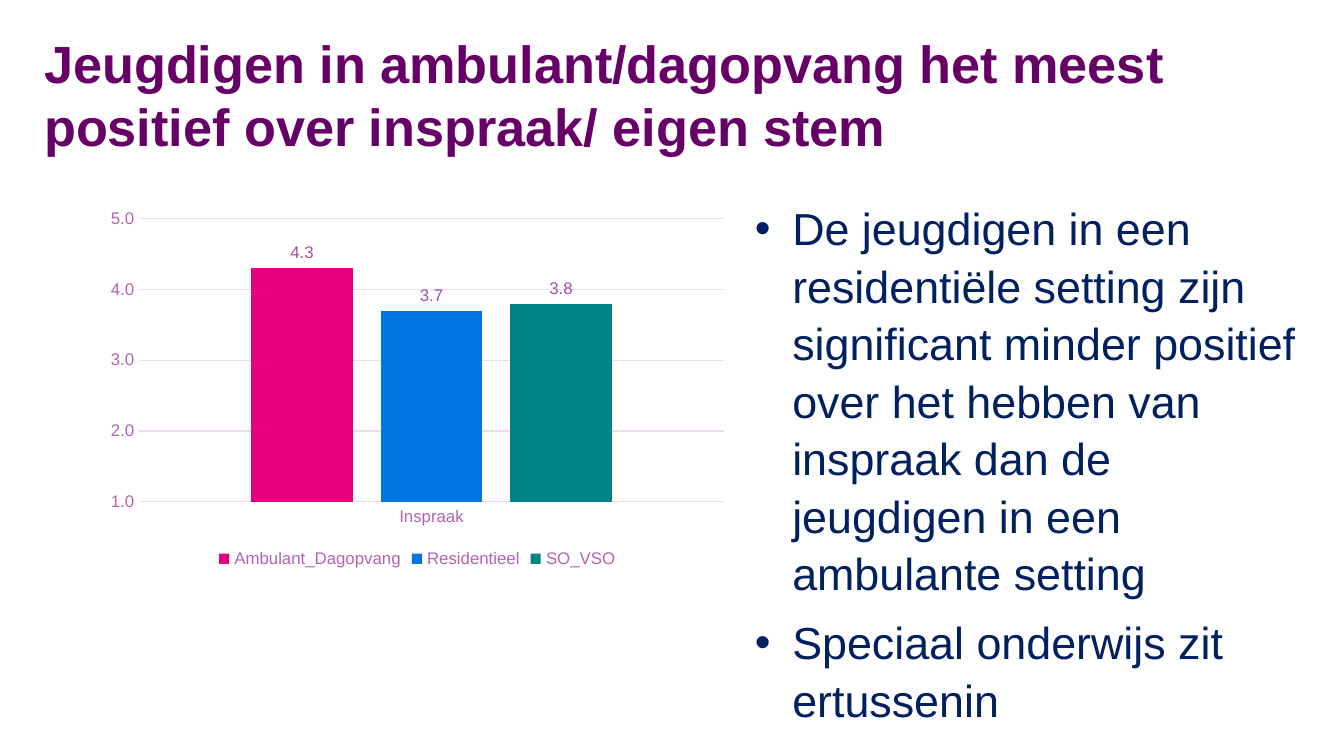
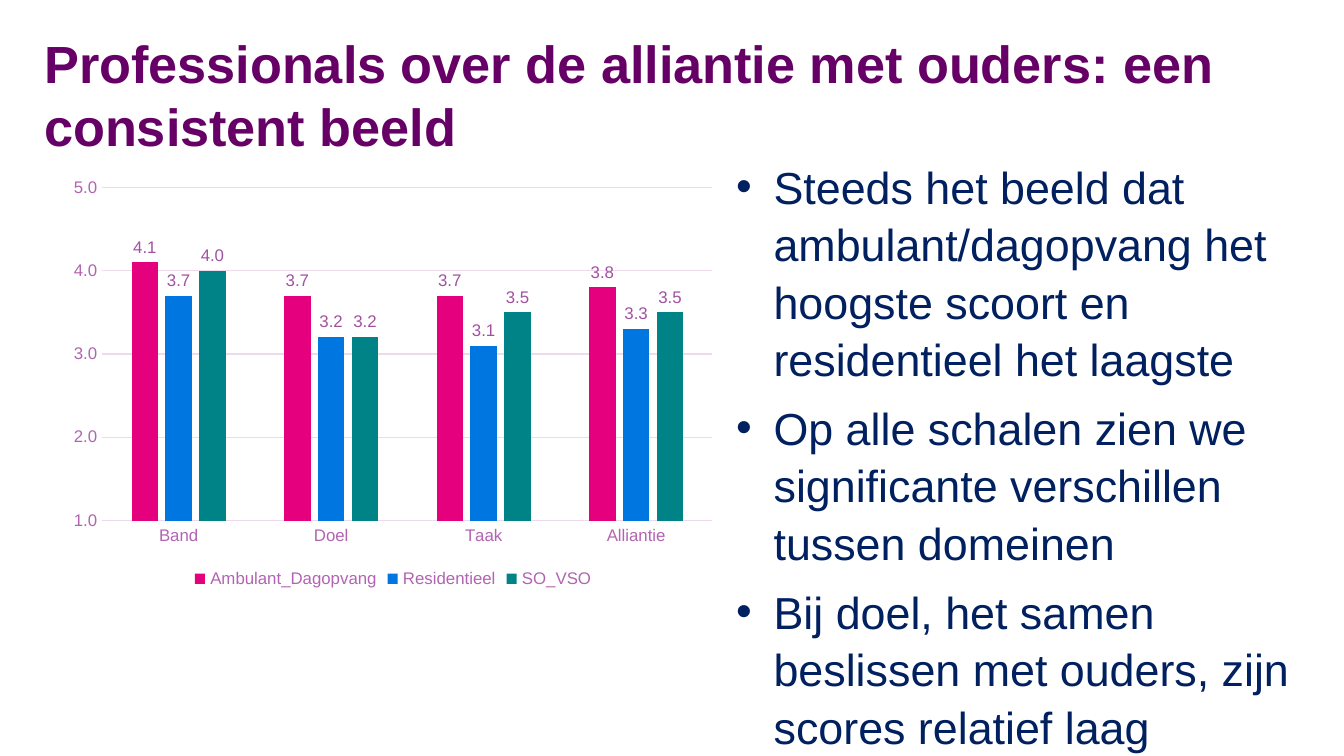
from lxml.etree import SubElement as Sub
from pptx import Presentation
from pptx.chart.data import CategoryChartData as Data
from pptx.dml.color import RGBColor as Rgb
from pptx.enum.chart import XL_CHART_TYPE as Kind, XL_LABEL_POSITION as Spot
from pptx.enum.chart import XL_LEGEND_POSITION as Side, XL_TICK_MARK as Tick
from pptx.enum.text import MSO_ANCHOR as Anchor, MSO_AUTO_SIZE as Fit, PP_ALIGN as Align
from pptx.oxml.ns import qn
from pptx.util import Pt

FACE = "Arial"
PLUM, NAVY, TEXT, MARK, GRID = "660066", "002060", "B264B2", "A251A1", "EDDBED"
BARS = {"Ambulant_Dagopvang": "E5007D", "Residentieel": "0076E0", "SO_VSO": "008386"}
FORM = "#,##0.0"


def tint(target, code):
    target.rgb = Rgb.from_string(code)


def style(font, size, code, bold=False):
    font.name, font.size, font.bold = FACE, Pt(size), bold
    tint(font.color, code)


def put(para, text, size=24, code=NAVY, bold=False, bullet=False, space=None, after=0):
    para.alignment = Align.LEFT
    para.space_before, para.space_after = Pt(0), Pt(after)
    if space:
        para.line_spacing = space
    if bullet:
        props = para._p.get_or_add_pPr()
        props.set("marL", str(Pt(20)))
        props.set("indent", str(-Pt(20)))
        Sub(props, qn("a:buFont"), typeface=FACE)
        Sub(props, qn("a:buChar"), char="•")
    run = para.add_run()
    run.text = text
    style(run.font, size, code, bold)


def inset(frame, wide, high):
    frame.margin_left = frame.margin_right = Pt(wide)
    frame.margin_top = frame.margin_bottom = Pt(high)
    frame.word_wrap = True


class Deck:
    def __init__(self):
        self.show = Presentation()
        self.show.slide_width, self.show.slide_height = Pt(720), Pt(405)
        self.slide = None

    def title(self, text):
        self.slide = self.show.slides.add_slide(self.show.slide_layouts[5])
        head = self.slide.shapes.title
        head.left, head.top, head.width, head.height = map(Pt, (16.5, 16.5, 687, 67.5))
        frame = head.text_frame
        inset(frame, 7.2, 3.6)
        frame.auto_size = Fit.NONE
        frame.vertical_anchor = Anchor.MIDDLE
        put(frame.paragraphs[0], text, size=28, code=PLUM, bold=True)

    def points(self, area, lines):
        frame = self.slide.shapes.add_textbox(*map(Pt, area)).text_frame
        inset(frame, 5.4, 2.7)
        frame.auto_size = Fit.SHAPE_TO_FIT_TEXT
        for spot, line in enumerate(lines):
            para = frame.add_paragraph() if spot else frame.paragraphs[0]
            put(para, line, bullet=True, space=1.07, after=6)

    def chart(self, area, names, rows):
        data = Data(number_format=FORM)
        data.categories = names
        for name, row in zip(BARS, rows):
            data.add_series(name, row)
        chart = self.slide.shapes.add_chart(Kind.COLUMN_CLUSTERED, *map(Pt, area), data).chart
        style(chart.font, 10, "663366")
        chart.has_title = False
        chart.has_legend = True
        chart.legend.position = Side.BOTTOM
        chart.legend.include_in_layout = False
        style(chart.legend.font, 9, TEXT)
        self.axes(chart)
        plot = chart.plots[0]
        plot.gap_width, plot.overlap, plot.vary_by_categories = 219, -27, False
        for bar in plot.series:
            bar.format.fill.solid()
            tint(bar.format.fill.fore_color, BARS[bar.name])
            bar.invert_if_negative = False
            tags = bar.data_labels
            tags.show_value = True
            tags.position = Spot.OUTSIDE_END
            tags.number_format, tags.number_format_is_linked = FORM, False
            style(tags.font, 9, MARK)

    def axes(self, chart):
        base, scale = chart.category_axis, chart.value_axis
        for axis in (base, scale):
            axis.major_tick_mark = axis.minor_tick_mark = Tick.NONE
            style(axis.tick_labels.font, 9, TEXT)
        scale.minimum_scale, scale.maximum_scale, scale.major_unit = 1, 5, 1
        scale.tick_labels.number_format = FORM
        scale.tick_labels.number_format_is_linked = False
        scale.format.line.fill.background()
        scale.has_major_gridlines = True
        for line in (base.format.line, scale.major_gridlines.format.line):
            line.width = Pt(0.75)
            tint(line.color, GRID)


def main():
    deck = Deck()
    deck.title("Jeugdigen in ambulant/dagopvang het meest positief over inspraak/ eigen stem")
    deck.points((399, 103, 311, 259), [
        "De jeugdigen in een residentiële setting zijn significant minder positief "
        "over het hebben van inspraak dan de jeugdigen in een ambulante setting",
        "Speciaal onderwijs zit ertussenin",
    ])
    deck.chart((52.5, 108, 342, 199.5), ["Inspraak"], [[4.3], [3.7], [3.8]])

    deck.title("Professionals over de alliantie met ouders: een consistent beeld")
    deck.points((389, 80.6, 324.7, 327.6), [
        "Steeds het beeld dat ambulant/dagopvang het hoogste scoort en residentieel het laagste",
        "Op alle schalen zien we significante verschillen tussen domeinen",
        "Bij doel, het samen beslissen met ouders, zijn scores relatief laag",
    ])
    deck.chart((32.4, 90.7, 356.4, 227.5), ["Band", "Doel", "Taak", "Alliantie"], [
        [4.1, 3.7, 3.7, 3.8],
        [3.7, 3.2, 3.1, 3.3],
        [4.0, 3.2, 3.5, 3.5],
    ])
    deck.show.save("out.pptx")


if __name__ == "__main__":
    main()
